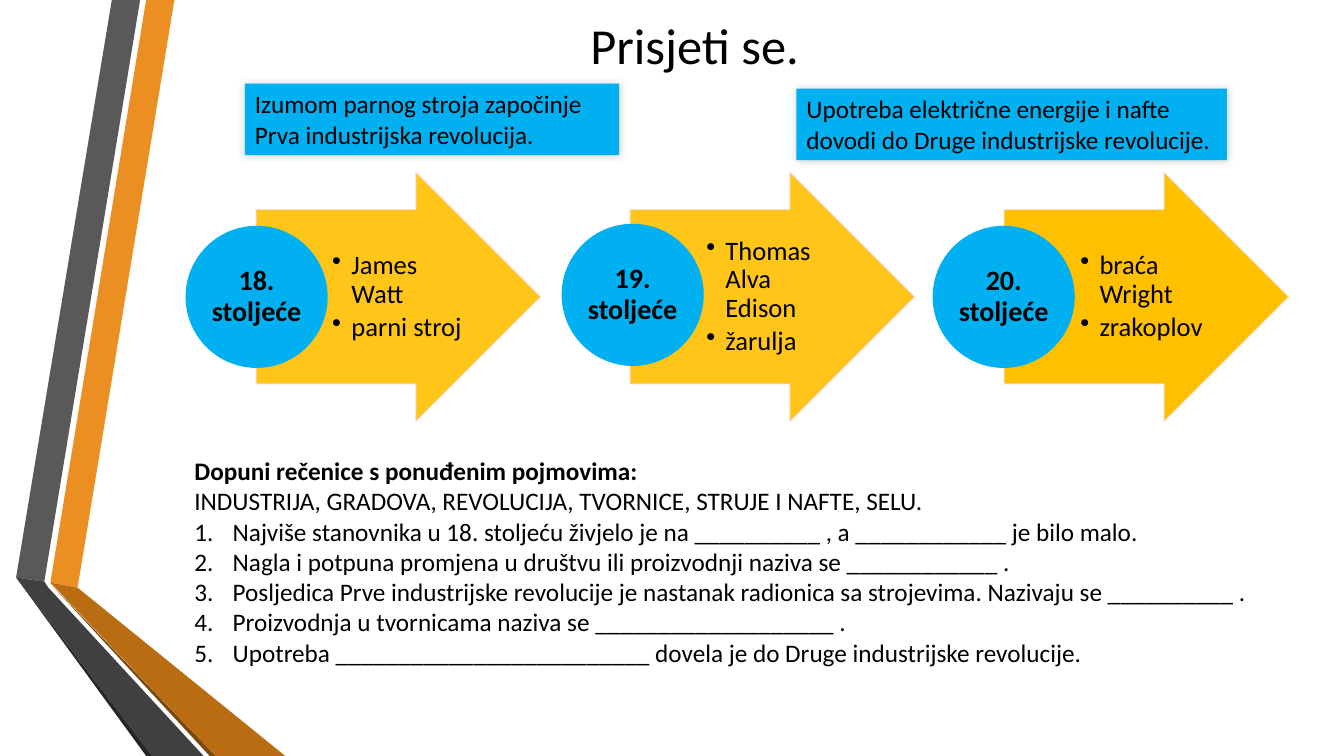
from lxml.etree import SubElement
from pptx import Presentation
from pptx.dml.color import RGBColor
from pptx.enum.shapes import MSO_SHAPE
from pptx.enum.text import MSO_ANCHOR, PP_ALIGN
from pptx.oxml.ns import qn
from pptx.util import Inches, Pt

COLORS = {
    "black": "000000", "blue": "00B0F0", "yellow": "FFC000", "edge": "F7DBCD",
    "orange": "EB8F22", "gray": "595959", "ink": "262626", "brown": "7B480B",
    "dark orange": "B96C11", "dark gray": "404040",
}
FONT = "Calibri"

TITLE = "Prisjeti se."
# Ribbon pieces on the left edge: color, outline points
RIBBONS = [
    ("orange", [(0.5, 5.78), (0.77, 5.83), (1.73, 0), (1.45, 0)]),
    ("gray", [(1.39, 0), (1.11, 0), (0.16, 5.73), (0.44, 5.77)]),
    ("ink", [(0.16, 5.73), (1.45, 7.5), (1.51, 7.5)]),
    ("brown", [(0.5, 5.79), (2.08, 7.5), (2.14, 7.5)]),
    ("dark orange", [(0.5, 5.78), (2.14, 7.5), (2.83, 7.5), (0.77, 5.83)]),
    ("dark gray", [(2.02, 7.5), (0.48, 5.83), (0.44, 5.77), (0.16, 5.73), (1.51, 7.5)]),
]
# Centuries: circle text, arrow bullets, circle left and top, arrow opacity in %
CENTURIES = [
    ("18. stoljeće", ["James Watt", "parni stroj"], 1.84, 2.24, 90),
    ("19. stoljeće", ["Thomas Alva Edison", "žarulja"], 5.57, 2.22, 90),
    ("20. stoljeće", ["braća Wright", "zrakoplov"], 9.25, 2.24, 100),
]
# Notes: text, left, top, width
NOTES = [
    ("Izumom parnog stroja započinje Prva industrijska revolucija.", 2.43, 0.83, 3.71),
    ("Upotreba električne energije i nafte dovodi do Druge industrijske revolucije.",
     7.9, 0.88, 4.27),
]
TASK_HEADING = "Dopuni rečenice s ponuđenim pojmovima:"
TASK_WORDS = "INDUSTRIJA, GRADOVA, REVOLUCIJA, TVORNICE, STRUJE I NAFTE, SELU."
SENTENCES = [
    "Najviše stanovnika u 18. stoljeću živjelo je na __________ , a ____________ je bilo malo.",
    "Nagla i potpuna promjena u društvu ili proizvodnji naziva se ____________ .",
    "Posljedica Prve industrijske revolucije je nastanak radionica sa strojevima. "
    "Nazivaju se __________ .",
    "Proizvodnja u tvornicama naziva se ___________________ .",
    "Upotreba _________________________ dovela je do Druge industrijske revolucije.",
]

ARROW_LEFT, ARROW_STEP, ARROW_TOP = 2.54, 3.71, 1.71
ARROW_WIDTH, ARROW_HEIGHT = 2.82, 2.47
CIRCLE_SIZE, CIRCLE_TEXT_SIZE = 1.41, 1.0


def rgb(name):
    return RGBColor.from_string(COLORS[name])


def paint(shape, color):
    shape.shadow.inherit = False
    shape.fill.solid()
    shape.fill.fore_color.rgb = rgb(color)
    shape.line.fill.background()


def add_opacity(solid_fill, percent):
    SubElement(solid_fill[0], qn("a:alpha")).set("val", str(percent * 1000))


def add_preset(slide, kind, left, top, width, height, color):
    shape = slide.shapes.add_shape(
        kind, Inches(left), Inches(top), Inches(width), Inches(height))
    paint(shape, color)
    return shape


def write(shape, lines, size, bold=False, align=PP_ALIGN.LEFT,
          anchor=MSO_ANCHOR.TOP, margins=None):
    frame = shape.text_frame
    frame.text = "\n".join(lines)
    frame.word_wrap = True
    frame.vertical_anchor = anchor
    if margins:
        (frame.margin_left, frame.margin_top,
         frame.margin_right, frame.margin_bottom) = [Inches(m) for m in margins]
    for paragraph in frame.paragraphs:
        paragraph.alignment = align
        for run in paragraph.runs:
            run.font.name = FONT
            run.font.size = Pt(size)
            run.font.bold = bold
            run.font.color.rgb = rgb("black")
    return frame.paragraphs


def add_text(slide, left, top, width, height, lines, size, **options):
    box = slide.shapes.add_textbox(
        Inches(left), Inches(top), Inches(width), Inches(height))
    return write(box, lines, size, **options)


def set_spacing(paragraph, after):
    paragraph.line_spacing = 0.9
    paragraph.space_after = Pt(after)


def add_bullet(paragraph, indent, tag, attribute, value):
    properties = paragraph._p.get_or_add_pPr()
    properties.set("marL", str(Inches(indent)))
    properties.set("indent", str(-Inches(indent)))
    SubElement(properties, qn(tag)).set(attribute, value)


def add_soft_shadow(shape):
    effects = shape._element.spPr.find(qn("a:effectLst"))
    shadow = SubElement(effects, qn("a:outerShdw"), blurRad=str(Pt(6)), dist="0",
                        dir=str(225 * 60000), rotWithShape="0")
    color = SubElement(shadow, qn("a:srgbClr"), val=COLORS["black"])
    SubElement(color, qn("a:alpha"), val="20000")


def add_ribbon(slide, color, points):
    corners = [(Inches(x), Inches(y)) for x, y in points]
    builder = slide.shapes.build_freeform(*corners[0])
    builder.add_line_segments(corners[1:], close=True)
    paint(builder.convert_to_shape(), color)


def add_century(slide, index, name, bullets, circle_left, circle_top, opacity):
    # Arrow with its bullets
    left = ARROW_LEFT + index * ARROW_STEP
    arrow = add_preset(slide, MSO_SHAPE.RIGHT_ARROW, left, ARROW_TOP,
                       ARROW_WIDTH, ARROW_HEIGHT, "yellow")
    arrow.adjustments[0], arrow.adjustments[1] = 0.7, 0.5
    arrow.line.color.rgb = rgb("edge")
    arrow.line.width = Pt(0.75)
    properties = arrow._element.spPr
    add_opacity(properties.find(qn("a:solidFill")), opacity)
    add_opacity(properties.find(qn("a:ln")).find(qn("a:solidFill")), 90)
    band_height = ARROW_HEIGHT * 0.7
    band_top = ARROW_TOP + (ARROW_HEIGHT - band_height) / 2
    for paragraph in add_text(slide, left + CIRCLE_SIZE / 2, band_top, 1.38, band_height,
                              bullets, 19, anchor=MSO_ANCHOR.MIDDLE,
                              margins=(0.05, 0.01, 0.03, 0.01)):
        set_spacing(paragraph, 3)
        add_bullet(paragraph, 0.19, "a:buChar", "char", "•")

    # Circle with the century
    add_preset(slide, MSO_SHAPE.OVAL, circle_left, circle_top,
               CIRCLE_SIZE, CIRCLE_SIZE, "blue")
    inset = (CIRCLE_SIZE - CIRCLE_TEXT_SIZE) / 2
    label = add_text(slide, circle_left + inset, circle_top + inset,
                     CIRCLE_TEXT_SIZE, CIRCLE_TEXT_SIZE, [name], 20, bold=True,
                     align=PP_ALIGN.CENTER, anchor=MSO_ANCHOR.MIDDLE, margins=(0.01,) * 4)
    set_spacing(label[0], 7)


def main():
    presentation = Presentation()
    presentation.slide_width, presentation.slide_height = Inches(13.33), Inches(7.5)
    slide = presentation.slides.add_slide(presentation.slide_layouts[6])

    # Ribbons and title
    for color, points in RIBBONS:
        add_ribbon(slide, color, points)
    add_text(slide, 4.39, 0.13, 5, 0.63, [TITLE], 36,
             align=PP_ALIGN.CENTER, anchor=MSO_ANCHOR.MIDDLE)

    # Timeline
    for index, century in enumerate(CENTURIES):
        add_century(slide, index, *century)

    # Exercise
    heading, _, *numbered = add_text(slide, 1.83, 4.47, 10.96, 2.83,
                                     [TASK_HEADING, TASK_WORDS, *SENTENCES], 18)
    heading.runs[0].font.bold = True
    for paragraph in numbered:
        add_bullet(paragraph, 0.38, "a:buAutoNum", "type", "arabicPeriod")

    # Notes above the timeline
    for text, left, top, width in NOTES:
        note = add_preset(slide, MSO_SHAPE.RECTANGLE, left, top, width, 0.71, "blue")
        add_soft_shadow(note)
        write(note, [text], 18)

    presentation.save("out.pptx")


if __name__ == "__main__":
    main()
